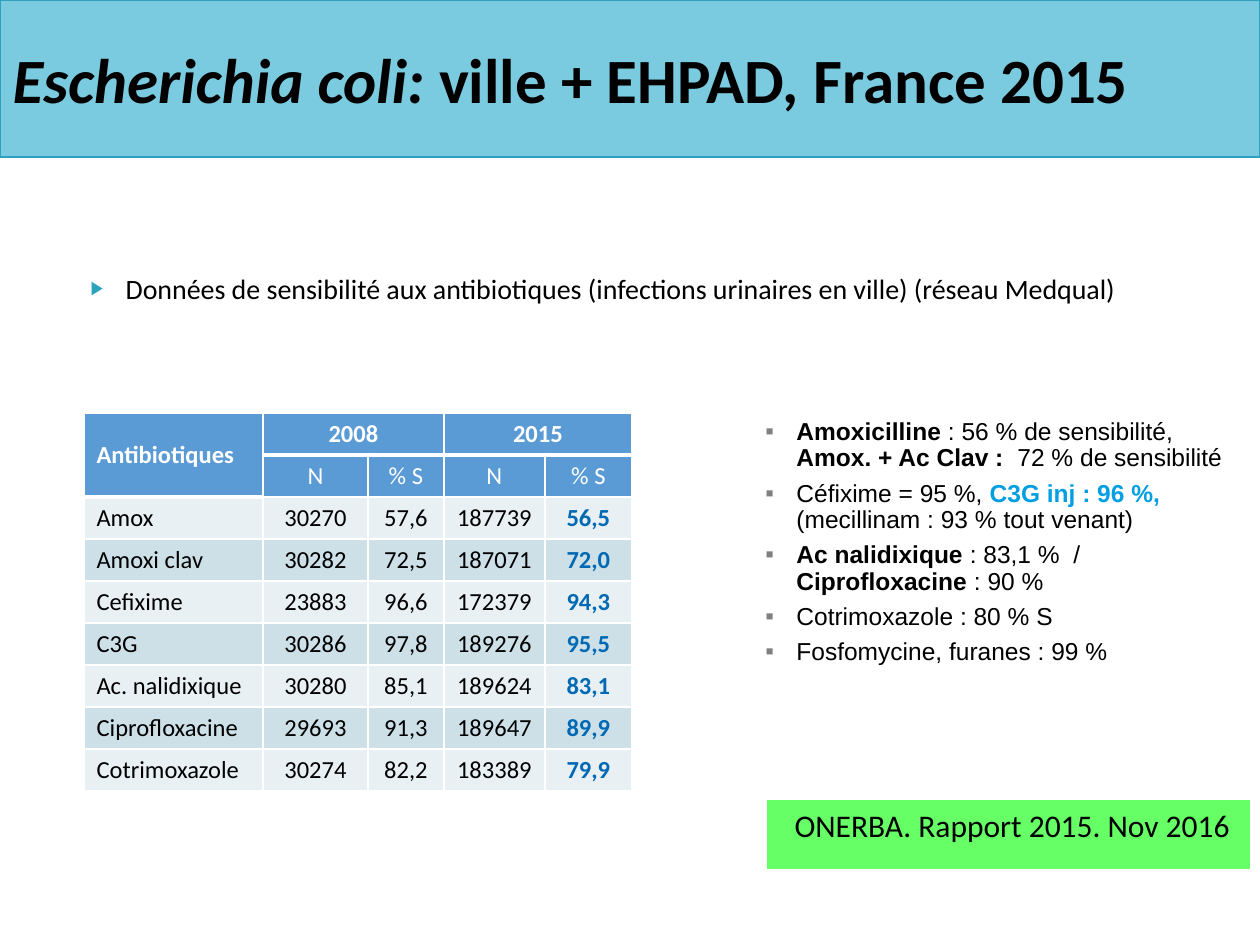
from dataclasses import dataclass

from lxml import etree
from pptx import Presentation
from pptx.dml.color import RGBColor
from pptx.enum.text import MSO_ANCHOR, MSO_AUTO_SIZE, PP_ALIGN
from pptx.oxml.ns import qn
from pptx.util import Emu, Pt

LEFT, CENTER = PP_ALIGN.LEFT, PP_ALIGN.CENTER
TOP, MIDDLE = MSO_ANCHOR.TOP, MSO_ANCHOR.MIDDLE
FIXED, GROW = MSO_AUTO_SIZE.NONE, MSO_AUTO_SIZE.SHAPE_TO_FIT_TEXT
EMU_PER_PX = 914400 / 126


@dataclass(frozen=True)
class Theme:
    heading_font: str = "Calibri"
    findings_font: str = "Arial"
    ink: str = "000000"
    paper: str = "FFFFFF"
    banner: str = "7ACBE0"
    accent: str = "2DA2BF"
    source: str = "66FF66"
    marker: str = "808080"
    highlight: str = "009FE3"
    latest: str = "0069B4"
    header: str = "5B9BD5"
    bands: tuple = ("E8F0F4", "CDE0E8")
    title_size: int = 36
    source_size: int = 18
    body_size: int = 16
    small_size: int = 14


def px(value):
    return Emu(round(value * EMU_PER_PX))


def add_text(paragraph, text, *, size, color, font, bold=False, italic=False):
    run = paragraph.add_run()
    run.text = text
    run.font.size = Pt(size)
    run.font.name = font
    run.font.bold = bold
    run.font.italic = italic
    run.font.color.rgb = RGBColor.from_string(color)


def format_list(paragraph, margin, indent, bullet=None, color=None, percent=100):
    properties = paragraph._p.get_or_add_pPr()
    properties.set("marL", str(px(margin)))
    properties.set("indent", str(px(indent)))
    if bullet is None:
        etree.SubElement(properties, qn("a:buNone"))
        return
    bullet_color = etree.SubElement(properties, qn("a:buClr"))
    etree.SubElement(bullet_color, qn("a:srgbClr"), val=color)
    etree.SubElement(properties, qn("a:buSzPct"), val=str(percent * 1000))
    etree.SubElement(properties, qn("a:buFont"), typeface="Arial")
    etree.SubElement(properties, qn("a:buChar"), char=bullet)


class SlideBuilder:
    def __init__(self, slide, theme):
        self.slide = slide
        self.theme = theme

    def placeholder(self, index, box, anchor=TOP, fill=None, line=None):
        holder = self.slide.placeholders[index]
        holder.left, holder.top, holder.width, holder.height = map(px, box)
        if fill:
            holder.fill.solid()
            holder.fill.fore_color.rgb = RGBColor.from_string(fill)
        if line:
            holder.line.color.rgb = RGBColor.from_string(line)
            holder.line.width = Pt(0.75)
        frame = holder.text_frame
        frame.word_wrap = True
        frame.auto_size = FIXED
        frame.vertical_anchor = anchor
        paragraph = frame.paragraphs[0]
        paragraph.alignment = LEFT
        paragraph.space_before = Pt(0)
        return paragraph

    def title(self, species, scope, box):
        theme = self.theme
        heading = self.placeholder(0, box, MIDDLE, theme.banner, theme.accent)
        style = dict(size=theme.title_size, color=theme.ink, font=theme.heading_font, bold=True)
        add_text(heading, species, italic=True, **style)
        add_text(heading, scope, **style)

    def subject(self, text, box):
        theme = self.theme
        subject = self.placeholder(1, box)
        format_list(subject, 50, -35, "▶", theme.accent, 68)
        add_text(subject, text, size=theme.body_size, color=theme.ink, font=theme.heading_font)

    def source(self, text, box):
        theme = self.theme
        source = self.placeholder(2, box, fill=theme.source)
        format_list(source, 15, 0)
        add_text(source, text, size=theme.source_size, color=theme.ink, font=theme.heading_font)

    def findings(self, items, box):
        theme = self.theme
        frame = self.slide.shapes.add_textbox(*map(px, box)).text_frame
        frame.word_wrap = True
        frame.auto_size = GROW
        for number, parts in enumerate(items):
            finding = frame.add_paragraph() if number else frame.paragraphs[0]
            finding.line_spacing = 0.9
            finding.space_before = Pt(5)
            format_list(finding, 94, -31, "▪", theme.marker)
            for text, bold, color in parts:
                add_text(finding, text, size=theme.small_size, color=color,
                         font=theme.findings_font, bold=bold)

    def cell(self, cell, text, fill, color, bold, align, bottom=1):
        theme = self.theme
        properties = cell._tc.get_or_add_tcPr()
        for side, width in (("L", 1), ("R", 1), ("T", 1), ("B", bottom)):
            border = etree.SubElement(properties, qn(f"a:ln{side}"), w=str(Pt(width)))
            solid = etree.SubElement(border, qn("a:solidFill"))
            etree.SubElement(solid, qn("a:srgbClr"), val=theme.paper)
        cell.fill.solid()
        cell.fill.fore_color.rgb = RGBColor.from_string(fill)
        cell.margin_top = cell.margin_bottom = px(6)
        paragraph = cell.text_frame.paragraphs[0]
        paragraph.alignment = align
        if text:
            add_text(paragraph, text, size=theme.small_size, color=color,
                     font=theme.heading_font, bold=bold)

    def sensitivity_table(self, headers, records, left, top, widths, row_height):
        theme = self.theme
        rows = headers + records
        table = self.slide.shapes.add_table(
            len(rows), len(widths), px(left), px(top),
            px(sum(widths)), px(row_height * len(rows))).table
        table.first_row = table.horz_banding = False
        for column, width in zip(table.columns, widths):
            column.width = px(width)
        for row in table.rows:
            row.height = px(row_height)
        for r, values in enumerate(rows):
            is_header = r < len(headers)
            for c, value in enumerate(values):
                if is_header:
                    fill, color, bold = theme.header, theme.paper, r == 0
                else:
                    fill, bold = theme.bands[r % 2], c == len(widths) - 1
                    color = theme.latest if bold else theme.ink
                self.cell(table.cell(r, c), value, fill, color, bold,
                          CENTER if c else LEFT,
                          3 if r == 0 or (r, c) == (1, 0) else 1)
        for start, end in (((0, 0), (1, 0)), ((0, 1), (0, 2)), ((0, 3), (0, 4))):
            table.cell(*start).merge(table.cell(*end))
        table.cell(0, 0).vertical_anchor = MIDDLE


def main():
    theme = Theme()
    ink = theme.ink
    presentation = Presentation()
    presentation.slide_width, presentation.slide_height = px(1260), px(945)
    slide = presentation.slides.add_slide(presentation.slide_layouts[3])
    builder = SlideBuilder(slide, theme)

    builder.title("Escherichia coli: ", "ville + EHPAD, France 2015", (0, 0, 1260, 157))
    builder.subject("Données de sensibilité aux antibiotiques (infections urinaires en ville) "
                    "(réseau Medqual)", (63, 265, 1134, 563))
    builder.source("ONERBA. Rapport 2015. Nov 2016", (767, 800, 483, 69))
    builder.findings([
        [("Amoxicilline", True, ink), (" : 56 % de sensibilité, ", False, ink),
         ("Amox. + Ac Clav :  ", True, ink), ("72 % de sensibilité", False, ink)],
        [("Céfixime = 95 %, ", False, ink), ("C3G inj : 96 %, ", True, theme.highlight),
         ("(mecillinam : 93 % tout venant)", False, ink)],
        [("Ac nalidixique ", True, ink), (": 83,1 %  / ", False, ink),
         ("Ciprofloxacine ", True, ink), (": 90 %", False, ink)],
        [("Cotrimoxazole : 80 % S", False, ink)],
        [("Fosfomycine, furanes : 99 %", False, ink)],
    ], (690, 413, 559, 262))

    headers = [("Antibiotiques", "2008", "", "2015", ""), ("", "N", "% S", "N", "% S")]
    records = [
        ("Amox", "30270", "57,6", "187739", "56,5"),
        ("Amoxi clav", "30282", "72,5", "187071", "72,0"),
        ("Cefixime", "23883", "96,6", "172379", "94,3"),
        ("C3G", "30286", "97,8", "189276", "95,5"),
        ("Ac. nalidixique", "30280", "85,1", "189624", "83,1"),
        ("Ciprofloxacine", "29693", "91,3", "189647", "89,9"),
        ("Cotrimoxazole", "30274", "82,2", "183389", "79,9"),
    ]
    builder.sensitivity_table(headers, records, 84, 413, (179, 105, 76, 101, 87), 42)
    presentation.save("out.pptx")


if __name__ == "__main__":
    main()
